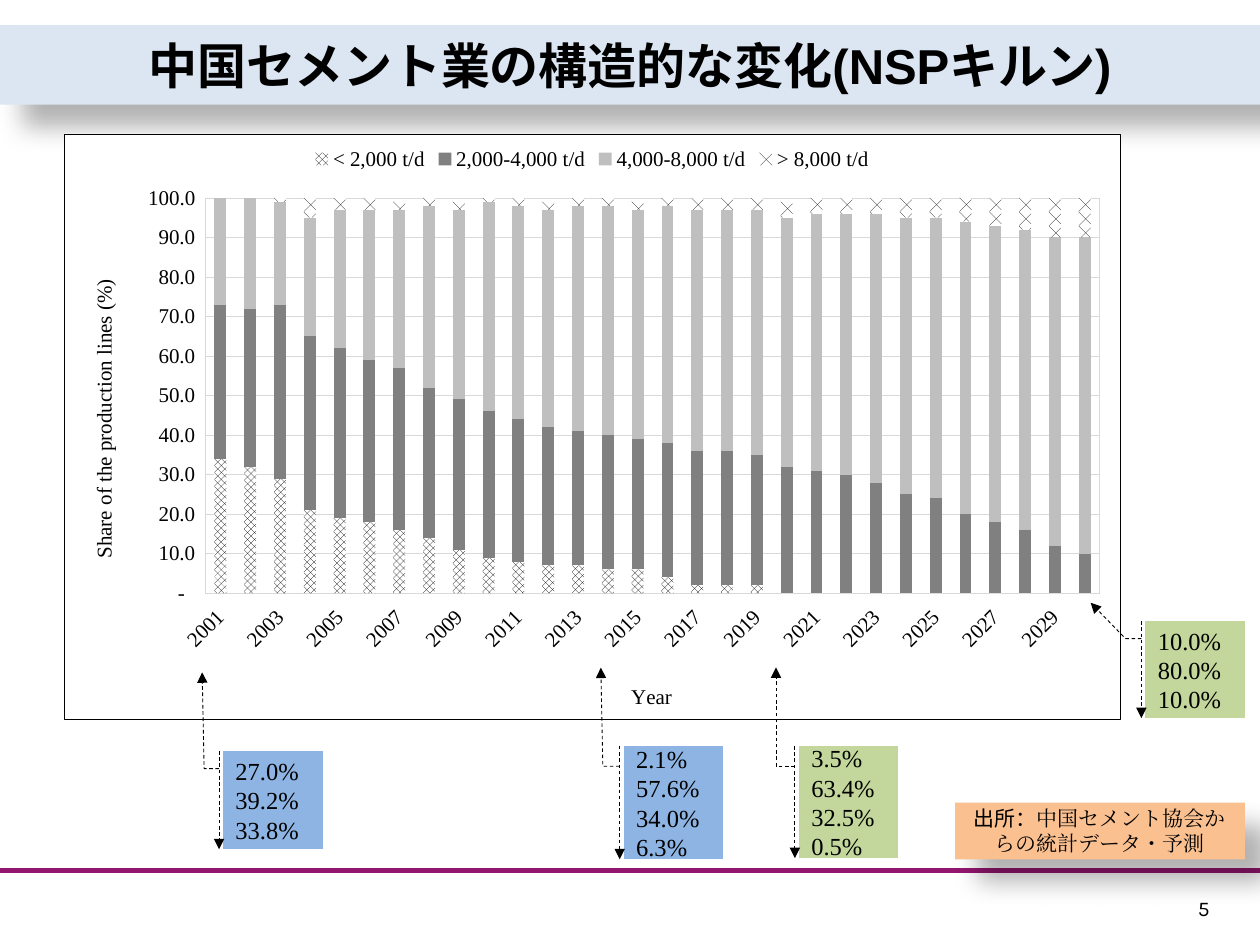
from pptx import Presentation
from pptx.chart.data import CategoryChartData
from pptx.dml.color import RGBColor
from pptx.enum.chart import XL_CHART_TYPE, XL_LEGEND_POSITION, XL_TICK_LABEL_POSITION, XL_TICK_MARK
from pptx.enum.dml import MSO_LINE, MSO_PATTERN
from pptx.enum.shapes import MSO_CONNECTOR, MSO_SHAPE
from pptx.enum.text import MSO_ANCHOR, PP_ALIGN
from pptx.oxml import parse_xml
from pptx.oxml.ns import nsdecls
from pptx.oxml.xmlchemy import OxmlElement
from pptx.util import Inches, Pt

BLACK = RGBColor(0x00, 0x00, 0x00)
WHITE = RGBColor(0xFF, 0xFF, 0xFF)
PLUM = RGBColor(0x93, 0x16, 0x6F)
PALE = RGBColor(0xDC, 0xE6, 0xF2)
GREEN = RGBColor(0xC3, 0xD6, 0x9B)
BLUE = RGBColor(0x8E, 0xB4, 0xE3)
PEACH = RGBColor(0xFA, 0xC0, 0x90)
GRID = RGBColor(0xD9, 0xD9, 0xD9)
DARK = RGBColor(0x80, 0x80, 0x80)
LIGHT = RGBColor(0xBF, 0xBF, 0xBF)
SERIF = "Times New Roman"

TITLE = "中国セメント業の構造的な変化(NSPキルン)"
SOURCE = [("出所：", "Arial"), ("中国セメント協会からの統計データ・予測", SERIF)]
YEARS = [str(year) for year in range(2001, 2031)]
SHARES = [
    ("< 2,000 t/d", MSO_PATTERN.LARGE_CHECKER_BOARD,
     [34, 32, 29, 21, 19, 18, 16, 14, 11, 9, 8, 7, 7, 6, 6, 4, 2, 2, 2] + [0] * 11),
    ("2,000-4,000 t/d", DARK,
     [39, 40, 44, 44, 43, 41, 41, 38, 38, 37, 36, 35, 34, 34, 33,
      34, 34, 34, 33, 32, 31, 30, 28, 25, 24, 20, 18, 16, 12, 10]),
    ("4,000-8,000 t/d", LIGHT,
     [27, 28, 26, 30, 35, 38, 40, 46, 48, 53, 54, 55, 57, 58, 58,
      60, 61, 61, 62, 63, 65, 66, 68, 70, 71, 74, 75, 76, 78, 80]),
    ("> 8,000 t/d", MSO_PATTERN.PERCENT_25,
     [0, 0, 1, 5, 4, 3, 2, 2, 2, 2, 2, 2, 2, 2, 2,
      2, 3, 3, 4, 4, 4, 4, 4, 5, 5, 6, 7, 8, 10, 10]),
]
NOTES = [
    ((9.09, 4.93, 0.79, 0.77), GREEN, (-0.2, -0.19, -0.55), ["10.0%", "80.0%", "10.0%"]),
    ((6.34, 5.92, 0.79, 0.89), GREEN, (-0.23, -0.7, -0.23), ["3.5%", "63.4%", "32.5%", "0.5%"]),
    ((4.95, 5.92, 0.79, 0.9), BLUE, (-0.21, -0.69, -0.23), ["2.1%", "57.6%", "34.0%", "6.3%"]),
    ((1.77, 5.96, 0.79, 0.78), BLUE, (-0.19, -0.8, -0.21), ["27.0%", "39.2%", "33.8%"]),
]
CHART = (0.51, 1.06, 8.38, 4.65)
PLOT = (1.12, 0.51, 7.1, 3.14)
LABEL = (4.47, 4.34)


def place(box):
    return [Inches(size) for size in box]


def style(font, size, name=SERIF, bold=False):
    font.size, font.name, font.bold = Pt(size), name, bold
    font.color.rgb = BLACK


def write(para, text, size, name=SERIF, bold=False):
    run = para.add_run()
    run.text = text
    style(run.font, size, name, bold)
    return run


def paint(shape, color):
    shape.fill.solid()
    shape.fill.fore_color.rgb = color


def shade(shape):
    shape._element.spPr.append(parse_xml(
        f'<a:effectLst {nsdecls("a")}><a:outerShdw blurRad="{Pt(15)}" dist="{Pt(18)}" dir="2700000" '
        'algn="tl" rotWithShape="0"><a:srgbClr val="000000"><a:alpha val="30000"/></a:srgbClr>'
        '</a:outerShdw></a:effectLst>'))


def layout(node, box, mark=""):
    for old in node.xpath("c:layout"):
        node.remove(old)
    sizes = "".join(f'<c:{key} val="{size / full}"/>'
                    for key, size, full in zip("xywh", box, CHART[2:] * 2))
    return parse_xml(
        f'<c:layout {nsdecls("c")}><c:manualLayout>{mark}'
        f'<c:xMode val="edge"/><c:yMode val="edge"/>{sizes}</c:manualLayout></c:layout>')


def border(color, width, fill):
    return parse_xml(
        f'<c:spPr {nsdecls("c", "a")}>{fill}<a:ln w="{Pt(width)}"><a:solidFill>'
        f'<a:srgbClr val="{color}"/></a:solidFill></a:ln></c:spPr>')


def add_head(slide):
    title = slide.shapes.title
    title.left, title.top, title.width, title.height = place((0, 0.2, 10, 0.63))
    paint(title, PALE)
    shade(title)
    frame = title.text_frame
    frame.vertical_anchor = MSO_ANCHOR.MIDDLE
    para = frame.paragraphs[0]
    para.alignment = PP_ALIGN.CENTER
    write(para, TITLE, 28, "Arial", True)


def add_foot(slide):
    rule = slide.shapes.add_connector(MSO_CONNECTOR.STRAIGHT, *place((0, 6.91, 10, 6.91)))
    rule.line.color.rgb, rule.line.width = PLUM, Pt(3)
    rule._element.spPr.append(OxmlElement("a:effectLst"))
    page = slide.shapes.add_textbox(*place((9.41, 7.06, 0.47, 0.3))).text_frame
    page.word_wrap = True
    write(page.paragraphs[0], "5", 12, "Karla")


def add_shares(slide):
    data = CategoryChartData()
    data.categories = YEARS
    for name, _, vals in SHARES:
        data.add_series(name, vals)
    chart = slide.shapes.add_chart(XL_CHART_TYPE.COLUMN_STACKED, *place(CHART), data).chart
    style(chart.font, 10, "Calibri")
    chart.has_title = False
    chart.has_legend = True
    chart.legend.position = XL_LEGEND_POSITION.TOP
    chart.legend.include_in_layout = False
    style(chart.legend.font, 12)
    plot = chart.plots[0]
    plot.gap_width, plot.overlap, plot.vary_by_categories = 150, 100, False
    for series, (_, look, _) in zip(plot.series, SHARES):
        fill = series.format.fill
        if isinstance(look, RGBColor):
            fill.solid()
            fill.fore_color.rgb = look
        else:
            fill.patterned()
            fill.pattern = look
            fill.fore_color.rgb, fill.back_color.rgb = BLACK, WHITE
    years, rates = chart.category_axis, chart.value_axis
    for axis, text in ((years, "Year"), (rates, "Share of the production lines (%)")):
        axis.major_tick_mark = axis.minor_tick_mark = XL_TICK_MARK.NONE
        style(axis.tick_labels.font, 12)
        write(axis.axis_title.text_frame.paragraphs[0], text, 12)
    years.tick_label_position = XL_TICK_LABEL_POSITION.LOW
    years.format.line.color.rgb, years.format.line.width = GRID, Pt(0.75)
    rates.format.line.fill.background()
    rates.minimum_scale, rates.maximum_scale, rates.major_unit = 0, 100, 10
    grid = rates.major_gridlines.format.line
    grid.color.rgb, grid.width = GRID, Pt(0.25)
    rates.tick_labels.number_format = '_-* #,##0.0_-;\\-* #,##0.0_-;_-* "-"?_-;_-@_-'
    rates.tick_labels.number_format_is_linked = False
    root = chart.element
    area = root.xpath("c:chart/c:plotArea")[0]
    area.xpath("c:catAx/c:txPr/a:bodyPr")[0].set("rot", "-2700000")
    area.insert(0, layout(area, PLOT, '<c:layoutTarget val="inner"/>'))
    area.append(border(GRID, 0.25, "<a:noFill/>"))
    label = area.xpath("c:catAx/c:title")[0]
    spot = layout(label, LABEL)
    label.xpath("c:tx")[0].addnext(spot)
    root.xpath("c:chart")[0].addnext(border(
        BLACK, 0.25, f'<a:solidFill><a:srgbClr val="{WHITE}"/></a:solidFill>'))


def add_note(slide, box, color, bend, lines):
    note = slide.shapes.add_shape(MSO_SHAPE.LINE_CALLOUT_2_ACCENT_BAR, *place(box))
    elbow, rise, tip = bend
    for spot, val in enumerate((0.18, -0.04, 0.18, elbow, rise, tip)):
        note.adjustments[spot] = val
    paint(note, color)
    note.shadow.inherit = False
    line = note.line
    line.color.rgb, line.width, line.dash_style = BLACK, Pt(0.5), MSO_LINE.DASH
    tail = OxmlElement("a:tailEnd")
    tail.set("type", "triangle")
    line._get_or_add_ln().append(tail)
    frame = note.text_frame
    frame.word_wrap, frame.vertical_anchor = False, MSO_ANCHOR.MIDDLE
    for row, text in enumerate(lines):
        para = frame.add_paragraph() if row else frame.paragraphs[0]
        para.alignment = PP_ALIGN.LEFT
        write(para, text, 14)


def add_source(slide):
    box = slide.shapes.add_shape(MSO_SHAPE.RECTANGLE, *place((7.58, 6.37, 2.3, 0.45)))
    paint(box, PEACH)
    box.line.fill.background()
    shade(box)
    frame = box.text_frame
    frame.word_wrap, frame.vertical_anchor = True, MSO_ANCHOR.MIDDLE
    para = frame.paragraphs[0]
    para.alignment = PP_ALIGN.CENTER
    for text, name in SOURCE:
        east = OxmlElement("a:ea")
        east.set("typeface", name)
        run = write(para, text, 12, name)
        run._r.rPr.append(east)


def main():
    """Build the slide on the changing kiln sizes of the cement industry."""
    deck = Presentation()
    deck.slide_width, deck.slide_height = Inches(10), Inches(7.5)
    slide = deck.slides.add_slide(deck.slide_layouts[5])
    add_foot(slide)
    add_head(slide)
    add_shares(slide)
    for note in NOTES:
        add_note(slide, *note)
    add_source(slide)
    deck.save("out.pptx")


if __name__ == "__main__":
    main()
